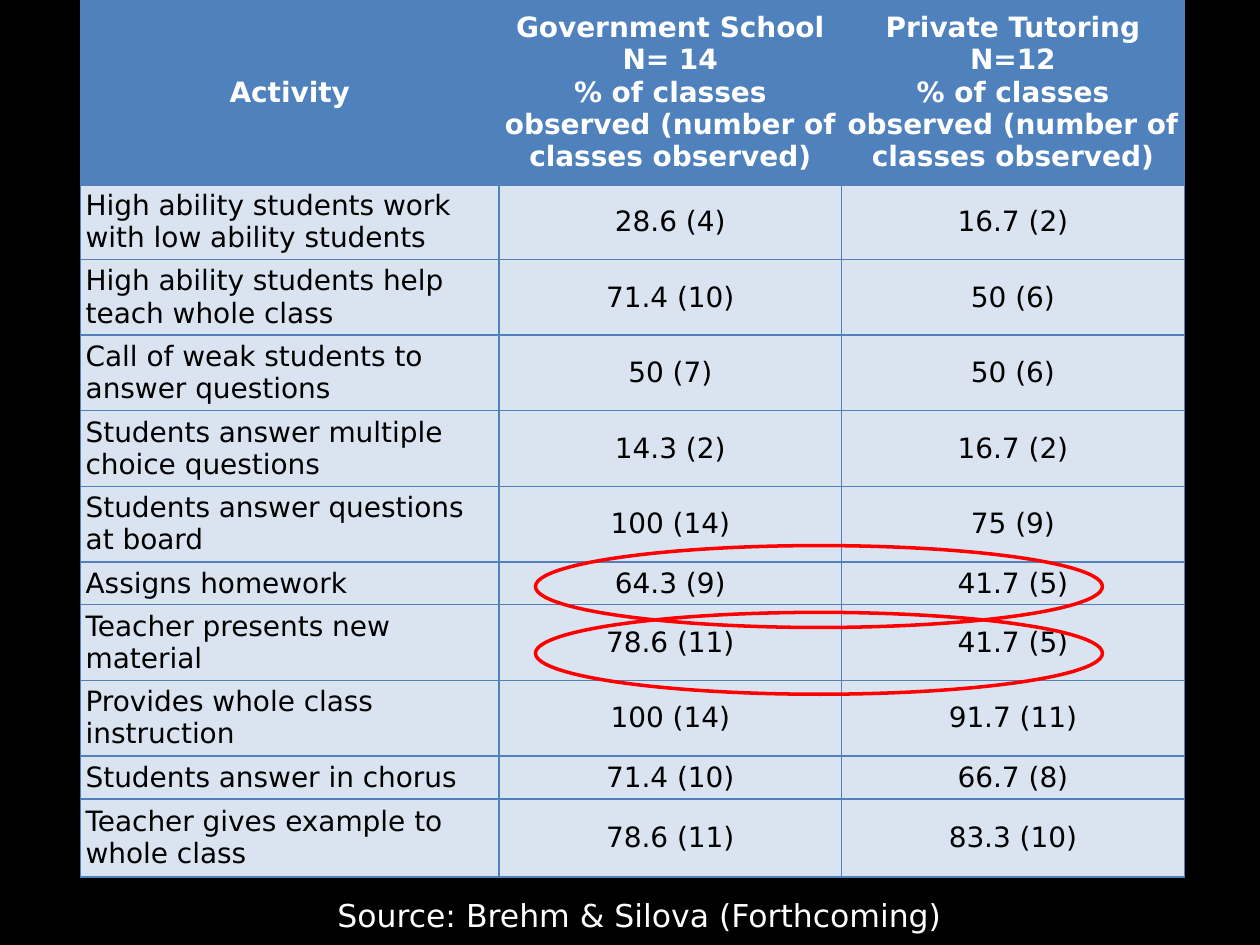
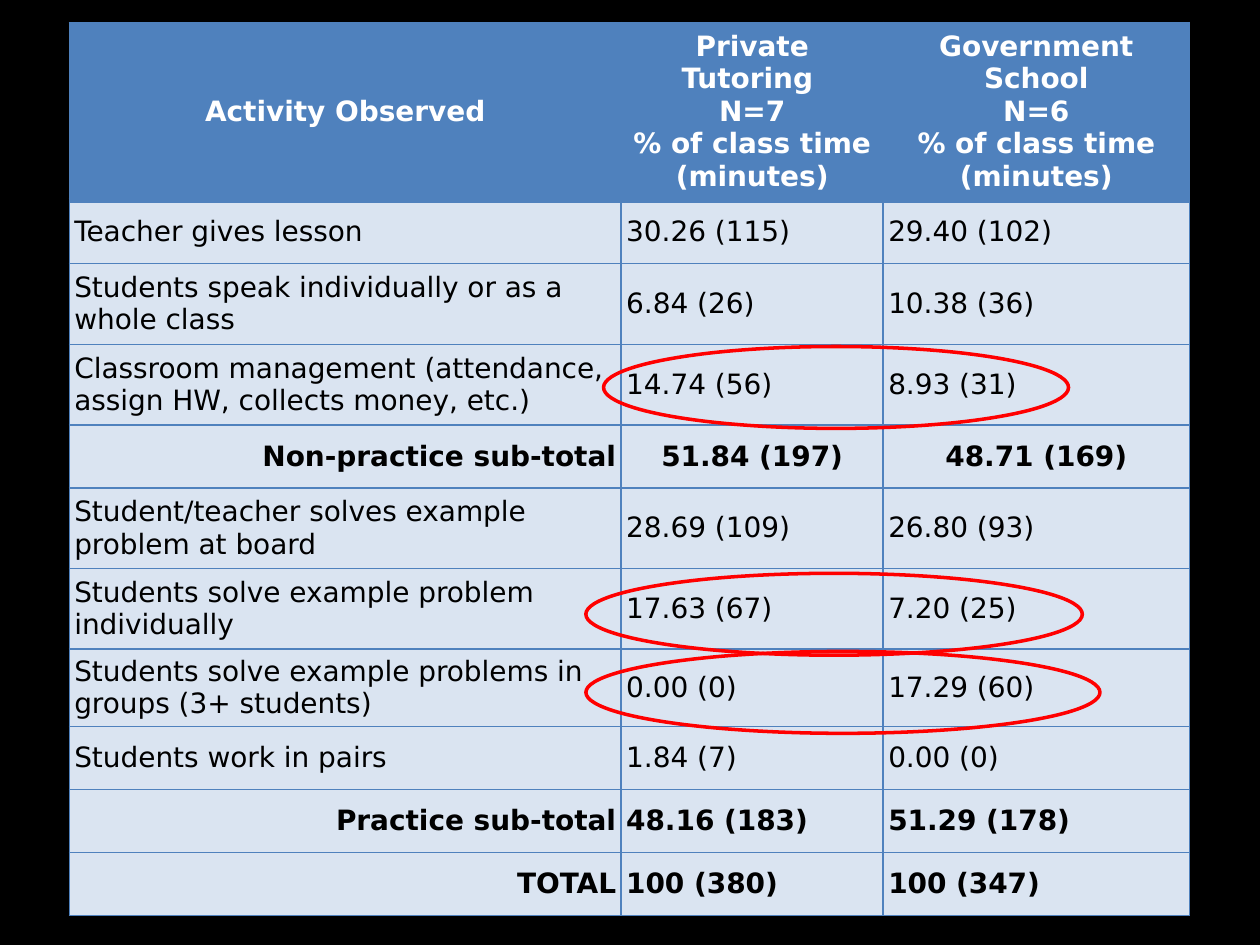
from lxml import etree
from pptx import Presentation
from pptx.dml.color import RGBColor
from pptx.enum import shapes, text
from pptx.oxml.ns import qn
from pptx.util import Inches, Pt

LEFT, CENTER, RIGHT = text.PP_ALIGN.LEFT, text.PP_ALIGN.CENTER, text.PP_ALIGN.RIGHT
BLACK, WHITE, BLUE, PALE, RED = "000000", "FFFFFF", "4F81BD", "DAE4F1", "FF0000"


def rgb(color):
    return RGBColor.from_string(color)


class Deck:
    """Builds slides of one style, one kind of element per method."""

    font = "DejaVu Sans"

    def __init__(self):
        self.prs = Presentation()
        self.prs.slide_width, self.prs.slide_height = Inches(10), Inches(7.5)

    def slide(self):
        self.s = self.prs.slides.add_slide(self.prs.slide_layouts[6])
        fill = self.s.background.fill
        fill.solid()
        fill.fore_color.rgb = rgb(BLACK)

    def set_text(self, tf, content, size, color, align=LEFT, bold=False):
        tf.word_wrap = True
        tf.text = content
        for p in tf.paragraphs:
            p.alignment = align
            p.font.name, p.font.size, p.font.bold = self.font, Pt(size), bold
            p.font.color.rgb = rgb(color)

    def border(self, cell, **widths):
        tc_pr = cell._tc.get_or_add_tcPr()
        for i, side in enumerate("LRTB"):
            ln = etree.Element(qn("a:ln" + side), w=str(Pt(widths.get(side, 1))))
            fill = etree.SubElement(ln, qn("a:solidFill"))
            etree.SubElement(fill, qn("a:srgbClr"), val=BLUE)
            tc_pr.insert(i, ln)

    def cell(self, cell, content, fill, color, align, bold, **widths):
        cell.margin_left = cell.margin_right = Inches(0.04)
        cell.margin_top = cell.margin_bottom = Inches(0.04)
        cell.vertical_anchor = text.MSO_ANCHOR.MIDDLE
        cell.fill.solid()
        cell.fill.fore_color.rgb = rgb(fill)
        self.border(cell, **widths)
        self.set_text(cell.text_frame, content, 16, color, align, bold)

    def table(self, left, top, widths, heights, header, rows, align, totals=None):
        totals = totals or {}
        tbl = self.s.shapes.add_table(
            len(heights), len(widths), Inches(left), Inches(top),
            Inches(sum(widths)), Inches(sum(heights))).table
        tbl.first_row = tbl.horz_banding = False
        for col, width in zip(tbl.columns, widths):
            col.width = Inches(width)
        for row, height in zip(tbl.rows, heights):
            row.height = Inches(height)
        for c, title in enumerate(header):
            self.cell(tbl.cell(0, c), title, BLUE, WHITE, CENTER, True, B=3)
        for r, row in enumerate(rows, 1):
            bold = row[0] in totals
            label_align = RIGHT if bold else LEFT
            value_align = totals.get(row[0], align)
            for c, value in enumerate(row):
                self.cell(tbl.cell(r, c), value, PALE, BLACK,
                          value_align if c else label_align, bold, T=3 if r == 1 else 1)

    def ring(self, left, top, width):
        sp = self.s.shapes.add_shape(shapes.MSO_SHAPE.OVAL, Inches(left), Inches(top),
                                     Inches(width), Inches(0.65))
        sp.shadow.inherit = False
        sp.fill.background()
        sp.line.color.rgb = rgb(RED)
        sp.line.width = Pt(2)

    def caption(self, left, top, width, height, content):
        sp = self.s.shapes.add_textbox(Inches(left), Inches(top), Inches(width), Inches(height))
        self.set_text(sp.text_frame, content, 18, WHITE)


ACTIVITIES = [
    ("High ability students work with low ability students", "28.6 (4)", "16.7 (2)"),
    ("High ability students help teach whole class", "71.4 (10)", "50 (6)"),
    ("Call of weak students to answer questions", "50 (7)", "50 (6)"),
    ("Students answer multiple choice questions", "14.3 (2)", "16.7 (2)"),
    ("Students answer questions at board", "100 (14)", "75 (9)"),
    ("Assigns homework", "64.3 (9)", "41.7 (5)"),
    ("Teacher presents new material", "78.6 (11)", "41.7 (5)"),
    ("Provides whole class instruction", "100 (14)", "91.7 (11)"),
    ("Students answer in chorus", "71.4 (10)", "66.7 (8)"),
    ("Teacher gives example to whole class", "78.6 (11)", "83.3 (10)"),
]
CLASS_TIME = [
    ("Teacher gives lesson", "30.26 (115)", "29.40 (102)"),
    ("Students speak individually or as a whole class", "6.84 (26)", "10.38 (36)"),
    ("Classroom management (attendance, assign HW, collects money, etc.)",
     "14.74 (56)", "8.93 (31)"),
    ("Non-practice sub-total", "51.84 (197)", "48.71 (169)"),
    ("Student/teacher solves example problem at board", "28.69 (109)", "26.80 (93)"),
    ("Students solve example problem individually", "17.63 (67)", "7.20 (25)"),
    ("Students solve example problems in groups (3+ students)", "0.00 (0)", "17.29 (60)"),
    ("Students work in pairs", "1.84 (7)", "0.00 (0)"),
    ("Practice sub-total", "48.16 (183)", "51.29 (178)"),
    ("TOTAL", "100 (380)", "100 (347)"),
]
TOTALS = {"Non-practice sub-total": CENTER, "Practice sub-total": LEFT, "TOTAL": LEFT}


def main():
    deck = Deck()

    deck.slide()
    observed = "% of classes observed (number of classes observed)"
    deck.table(0.64, 0.01, [3.32, 2.72, 2.72],
               [1.45] + [0.6] * 5 + [0.34, 0.6, 0.6, 0.34, 0.62],
               ["Activity", f"Government School\nN= 14\n{observed}",
                f"Private Tutoring\nN=12\n{observed}"],
               ACTIVITIES, CENTER)
    for top in (4.33, 4.86):
        deck.ring(4.25, top, 4.5)
    deck.caption(2.58, 7.06, 5.73, 0.4, "Source: Brehm & Silova (Forthcoming)")

    deck.slide()
    minutes = "% of class time (minutes)"
    deck.table(0.55, 0.18, [4.38, 2.08, 2.43],
               [1.37, 0.5, 0.64, 0.64, 0.5, 0.64, 0.64, 0.59] + [0.5] * 3,
               ["Activity Observed", f"Private Tutoring \nN=7\n{minutes}",
                f"Government School\nN=6\n{minutes}"],
               CLASS_TIME, LEFT, TOTALS)
    for left, top, width in ((4.65, 4.55, 3.94), (4.79, 2.75, 3.69), (4.65, 5.17, 4.08)):
        deck.ring(left, top, width)

    deck.prs.save("out.pptx")


if __name__ == "__main__":
    main()
